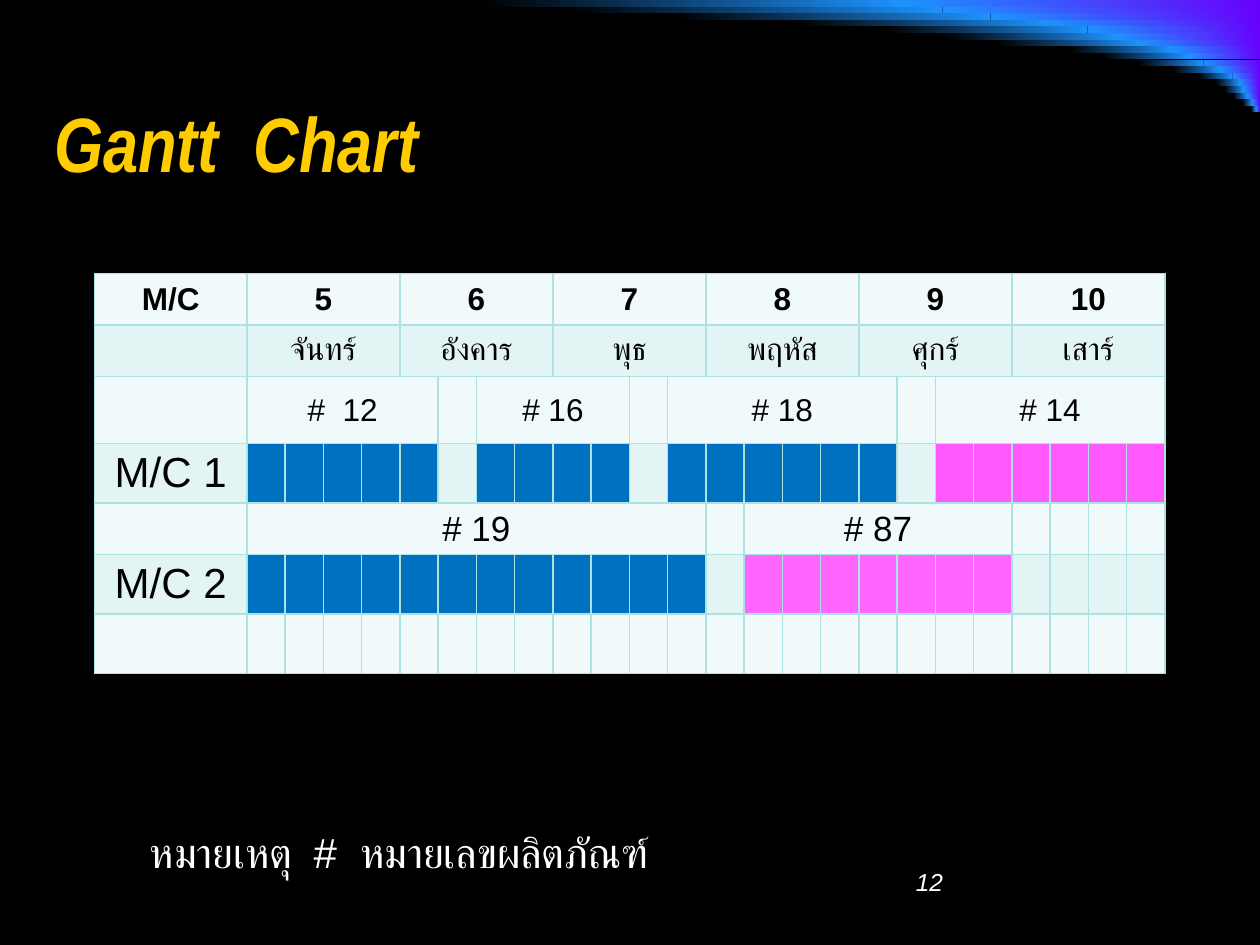
"""Build a slide with a two-machine Gantt chart."""
import math
import pptx
import pptx.chart.data
import pptx.dml.color
import pptx.enum.text
import pptx.oxml
import pptx.util
from pptx.util import Inches

NS = 'xmlns:a="http://schemas.openxmlformats.org/drawingml/2006/main"'
BLUE, PINK, ROSE = "0070C0", "FF58FF", "FF66FF"
BANDS = "F1FAFA", "E3F4F4"
SKY, VIOLET, BLACK, WHITE = "1D92FD", "6702FC", "000000", "FFFFFF"
DAYS = ["จันทร์", "อังคาร", "พุธ", "พฤหัส", "ศุกร์", "เสาร์"]

# Each part of a row is (label, slots, bar colour); unlabelled slots stay apart.
ROWS = [
    ("M/C", 0.41, 18, [(str(day), 4, None) for day in range(5, 11)]),
    ("", 0.41, 18, [(day, 4, None) for day in DAYS]),
    ("", 0.53, 18, [("#  12", 5, None), ("", 1, None), ("# 16", 4, None), ("", 1, None),
                    ("# 18", 6, None), ("", 1, None), ("# 14", 6, None)]),
    ("M/C 1", 0.47, 24, [("", 5, BLUE), ("", 1, None), ("", 4, BLUE), ("", 1, None),
                         ("", 6, BLUE), ("", 1, None), ("", 6, PINK)]),
    ("", 0.41, 20, [("# 19", 12, None), ("", 1, None), ("# 87", 7, None), ("", 4, None)]),
    ("M/C 2", 0.47, 24, [("", 12, BLUE), ("", 1, None), ("", 7, ROSE), ("", 4, None)]),
    ("", 0.47, 18, [("", 24, None)]),
]
STRIPES = [
    (3.83, 7.16), (4.53, 7.48), (5.36, 7.86), (6.33, 8.31), (7.02, 8.63), (7.51, 8.85),
    (7.92, 9.04), (8.48, 9.3), (8.75, 9.43), (9.03, 9.55), (9.31, 9.68), (9.51, 9.78),
    (9.65, 9.84), (9.72, 9.87), (9.79, 9.9), (9.86, 9.94), (9.93, 9.97),
]


def tint(code):
    return pptx.dml.color.RGBColor.from_string(code)


def paint(fill, code):
    fill.solid()
    fill.fore_color.rgb = tint(code)


def blend(shape, first, last):
    shape.shadow.inherit = False
    shape.line.fill.background()
    shape.fill.gradient()
    for stop, code, place in zip(shape.fill.gradient_stops, (first, last), (0, 1)):
        stop.color.rgb = tint(code)
        stop.position = place


def write(frame, text, size, code, bold=False, slant=False, face="Arial"):
    frame.text = text
    for run in frame.paragraphs[0].runs:
        font = run.font
        font.size, font.name = pptx.util.Pt(size), face
        font.bold, font.italic = bold, slant
        font.color.rgb = tint(code)


def note(slide, text, size, box, slant=False):
    frame = slide.shapes.add_textbox(*map(Inches, box)).text_frame
    frame.word_wrap = True
    write(frame, text, size, WHITE, slant=slant)


def edge(cell):
    props = cell._tc.get_or_add_tcPr()
    for spot, side in enumerate(("lnL", "lnR", "lnT", "lnB")):
        props.insert(spot, pptx.oxml.parse_xml(
            f'<a:{side} {NS} w="12700"><a:solidFill><a:srgbClr val="ADE2E2"/>'
            f'</a:solidFill></a:{side}>'))


def corner(slide):
    step = 0.84 / 16
    for row, (left, mid) in enumerate(STRIPES):
        for start, end, pair in ((mid, 10, (SKY, VIOLET)), (left, mid, (BLACK, SKY))):
            bar = slide.shapes.add_shape(
                pptx.enum.shapes.MSO_SHAPE.RECTANGLE, Inches(start), Inches(row * step),
                Inches(end - start), Inches(step))
            blend(bar, *pair)
            bar.fill.gradient_angle = 0


def swoosh(slide):
    turns = [math.pi * k / 60 for k in range(61)]
    dots = [(4.5 * math.sin(t), 1.79 - 0.29 * math.cos(t)) for t in turns]
    pen = slide.shapes.build_freeform(*dots[0], scale=Inches(1))
    pen.add_line_segments(dots[1:], close=True)
    shape = pen.convert_to_shape()
    blend(shape, SKY, BLACK)
    grad = shape.fill._xPr.gradFill
    grad.remove(grad.find(pptx.oxml.ns.qn("a:lin")))
    grad.append(pptx.oxml.parse_xml(
        f'<a:path {NS} path="shape"><a:fillToRect l="50000" t="50000" r="50000" b="50000"/>'
        '</a:path>'))


def gantt(slide):
    table = slide.shapes.add_table(
        len(ROWS), 25, *map(Inches, (0.75, 2.17, 8.5, 3.17))).table
    for col, part in enumerate(table.columns):
        part.width = Inches(7.29 / 24 if col else 1.21)
    for row, (head, height, size, parts) in enumerate(ROWS):
        table.rows[row].height = Inches(height)
        col = 0
        for text, span, code in [(head, 1, None)] + parts:
            for slot in range(col, col + span):
                cell = table.cell(row, slot)
                paint(cell.fill, code or BANDS[row % 2])
                edge(cell)
            cell = table.cell(row, col)
            if text:
                write(cell.text_frame, text, size, BLACK, bold=row == 0)
                cell.text_frame.paragraphs[0].alignment = pptx.enum.text.PP_ALIGN.CENTER
                if size < 24:
                    cell.vertical_anchor = pptx.enum.text.MSO_ANCHOR.MIDDLE
                if span > 1:
                    cell.merge(table.cell(row, col + span - 1))
            col += span


def main():
    deck = pptx.Presentation()
    deck.slide_width, deck.slide_height = Inches(10), Inches(7.5)
    slide = deck.slides.add_slide(deck.slide_layouts[5])
    paint(slide.background.fill, BLACK)
    corner(slide)
    swoosh(slide)
    title = slide.shapes.title
    title.left, title.top, title.width, title.height = map(Inches, (0.33, 0.5, 8.5, 1.25))
    write(title.text_frame, "Gantt  Chart", 44, "FFCC00", True, True, "Arial Narrow")
    title.text_frame.paragraphs[0].alignment = pptx.enum.text.PP_ALIGN.LEFT
    title.text_frame.vertical_anchor = pptx.enum.text.MSO_ANCHOR.MIDDLE
    gantt(slide)
    note(slide, "12", 14, (7.17, 6.83, 2.08, 0.5), slant=True)
    note(slide, "หมายเหตุ  #  หมายเลขผลิตภัณฑ์", 24, (1.09, 6.51, 4.54, 0.67))
    deck.save("out.pptx")


if __name__ == "__main__":
    main()
